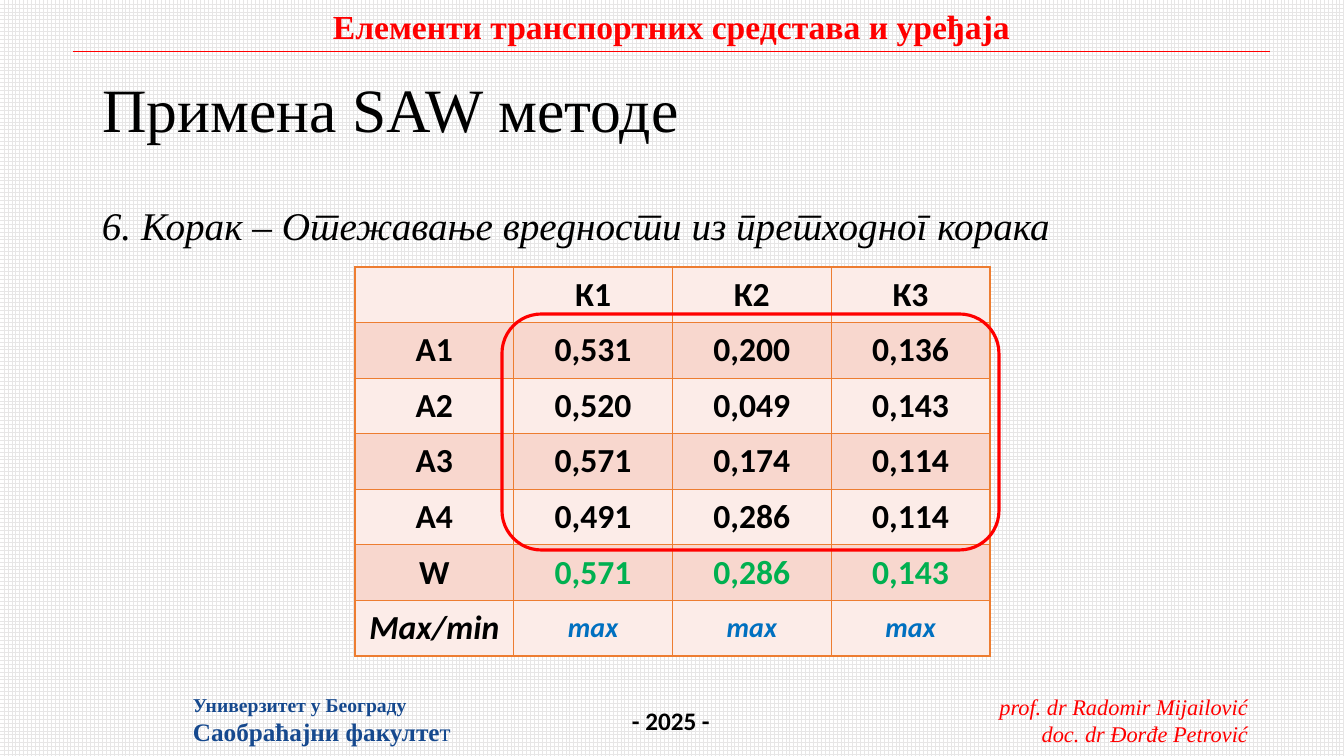
from lxml import etree
from pptx import Presentation
from pptx.dml.color import RGBColor
from pptx.enum.dml import MSO_PATTERN
from pptx.enum.shapes import MSO_CONNECTOR, MSO_SHAPE
from pptx.enum.text import MSO_ANCHOR, MSO_AUTO_SIZE, PP_ALIGN
from pptx.oxml.ns import qn
from pptx.util import Emu, Pt

LEFT, CENTER, RIGHT = PP_ALIGN.LEFT, PP_ALIGN.CENTER, PP_ALIGN.RIGHT
TOP, MIDDLE = MSO_ANCHOR.TOP, MSO_ANCHOR.MIDDLE
LARGE_GRID = MSO_PATTERN.LARGE_GRID
STRAIGHT, ROUNDED = MSO_CONNECTOR.STRAIGHT, MSO_SHAPE.ROUNDED_RECTANGLE
NO_AUTOFIT = MSO_AUTO_SIZE.NONE

SERIF, SANS = "Times New Roman", "Calibri"
RED, BLACK, NAVY = "FF0000", "000000", "16498E"
GREEN, BLUE, ORANGE = "00B050", "0070C0", "ED7D31"
BANDS = ("FCECE8", "F8D7CE")

HEADER_ROW = ("", "К1", "К2", "К3")
ALTERNATIVES = (
    ("А1", "0,531", "0,200", "0,136"),
    ("А2", "0,520", "0,049", "0,143"),
    ("А3", "0,571", "0,174", "0,114"),
    ("A4", "0,491", "0,286", "0,114"),
)
WEIGHTS = ("W", "0,571", "0,286", "0,143")
GOALS = ("Max/min", "max", "max", "max")


def px(length):
    """Turn slide pixels (100.8 to the inch) into EMU."""
    return Emu(round(length * 914400 / 100.8))


def color(value):
    return RGBColor.from_string(value)


def add_run(para, text, size, font, ink, bold=False, italic=False):
    run = para.add_run()
    run.text = text
    run.font.size = Pt(size)
    run.font.name = font
    run.font.color.rgb = color(ink)
    run.font.bold = bold
    run.font.italic = italic
    # Serbian language selects the local italic letter forms
    run._r.get_or_add_rPr().set("lang", "sr-Cyrl-RS")


def fill_frame(frame, lines, align=LEFT, anchor=TOP, wrap=False, spacing=1.0):
    """Each line is a list of runs, given as add_run arguments."""
    frame.auto_size = NO_AUTOFIT
    frame.word_wrap = wrap
    frame.vertical_anchor = anchor
    for index, runs in enumerate(lines):
        para = frame.add_paragraph() if index else frame.paragraphs[0]
        para.alignment = align
        para.line_spacing = spacing
        for run in runs:
            add_run(para, *run)


def add_text(page, box, lines, **layout):
    shape = page.shapes.add_textbox(*map(px, box))
    fill_frame(shape.text_frame, lines, **layout)


def add_background(page):
    fill = page.background.fill
    fill.patterned()
    fill.pattern = LARGE_GRID
    fill.fore_color.rgb = color("E7E6E6")
    fill.back_color.rgb = color("FFFFFF")


def add_header(page, left, top, width, height):
    bottom = top + height
    rule = page.shapes.add_connector(
        STRAIGHT, px(left), px(bottom), px(left + width), px(bottom))
    rule.line.color.rgb = color(RED)
    rule.line.width = Pt(0.5)
    etree.SubElement(rule._element.spPr, qn("a:effectLst"))
    course = "Елементи транспортних средстава и уређаја"
    add_text(page, (left, top, width, height),
             [[(course, 24, SERIF, RED, True)]], align=CENTER)


def add_footer(page, left, top, width, height):
    add_text(page, (left, top, 281, height), [
        [("Универзитет у Београду", 14, SERIF, NAVY, True)],
        [("Саобраћајни факулте", 18, SERIF, NAVY, True),
         ("т", 18, SERIF, NAVY)],
    ])
    add_text(page, (left + 439, top + 12, 99, 40),
             [[("- 2025 -", 18, SANS, BLACK, True)]])
    authors = ("prof. dr Radomir Mijailović", "doc. dr Đorđe Petrović")
    add_text(page, (left + width - 273, top, 273, height),
             [[(name, 16, SERIF, RED, False, True)] for name in authors],
             align=RIGHT)


def add_title(page, left, top, width, height):
    title = page.shapes.title
    title.left, title.top = px(left), px(top)
    title.width, title.height = px(width), px(height)
    fill_frame(title.text_frame, [[("Примена SAW методе", 44, SERIF, BLACK)]],
               anchor=MIDDLE, wrap=True, spacing=0.9)


def add_step(page, left, top, width, height):
    step = "6. Корак – Отежавање вредности из претходног корака"
    add_text(page, (left, top, width, height),
             [[(step, 28, SERIF, BLACK, False, True)]], wrap=True, spacing=0.9)


def add_borders(cell):
    properties = cell._tc.get_or_add_tcPr()
    for side in ("lnL", "lnR", "lnT", "lnB"):
        line = etree.SubElement(properties, qn(f"a:{side}"), w=str(Pt(1)))
        solid = etree.SubElement(line, qn("a:solidFill"))
        etree.SubElement(solid, qn("a:srgbClr"), val=ORANGE)


def cell_style(row, column):
    """Size, font, colour, bold and italic of a table cell."""
    if column and row is GOALS:
        return 20, SANS, BLUE, True, True
    ink = GREEN if column and row is WEIGHTS else BLACK
    return 24, SANS, ink, True, row is GOALS


def add_weighted_table(page, left, top, width, height):
    rows = (HEADER_ROW, *ALTERNATIVES, WEIGHTS, GOALS)
    columns = len(HEADER_ROW)
    frame = page.shapes.add_table(
        len(rows), columns, px(left), px(top), px(width), px(height))
    table = frame.table
    for column in table.columns:
        column.width = px(width / columns)
    for index, row in enumerate(rows):
        table.rows[index].height = px(height / len(rows))
        for column, text in enumerate(row):
            cell = table.cell(index, column)
            add_borders(cell)
            cell.fill.solid()
            cell.fill.fore_color.rgb = color(BANDS[index % 2])
            cell.vertical_anchor = MIDDLE
            para = cell.text_frame.paragraphs[0]
            para.alignment = CENTER
            if text:
                add_run(para, text, *cell_style(row, column))

    # Outline around the weighted values
    outline = page.shapes.add_shape(
        ROUNDED, px(left + 147), px(top + 47), px(497), px(236))
    outline.shadow.inherit = False
    outline.fill.background()
    outline.line.color.rgb = color(RED)
    outline.line.width = Pt(2.25)


def main():
    deck = Presentation()
    deck.slide_width, deck.slide_height = px(1344), px(756)
    page = deck.slides.add_slide(deck.slide_layouts.get_by_name("Title Only"))
    add_background(page)
    add_header(page, 73, 1, 1197, 50)
    add_footer(page, 183, 688, 1075, 65)
    add_title(page, 92, 40, 1159, 146)
    add_step(page, 92, 202, 1159, 60)
    add_weighted_table(page, 355, 267, 635, 389)
    deck.save("out.pptx")


if __name__ == "__main__":
    main()
